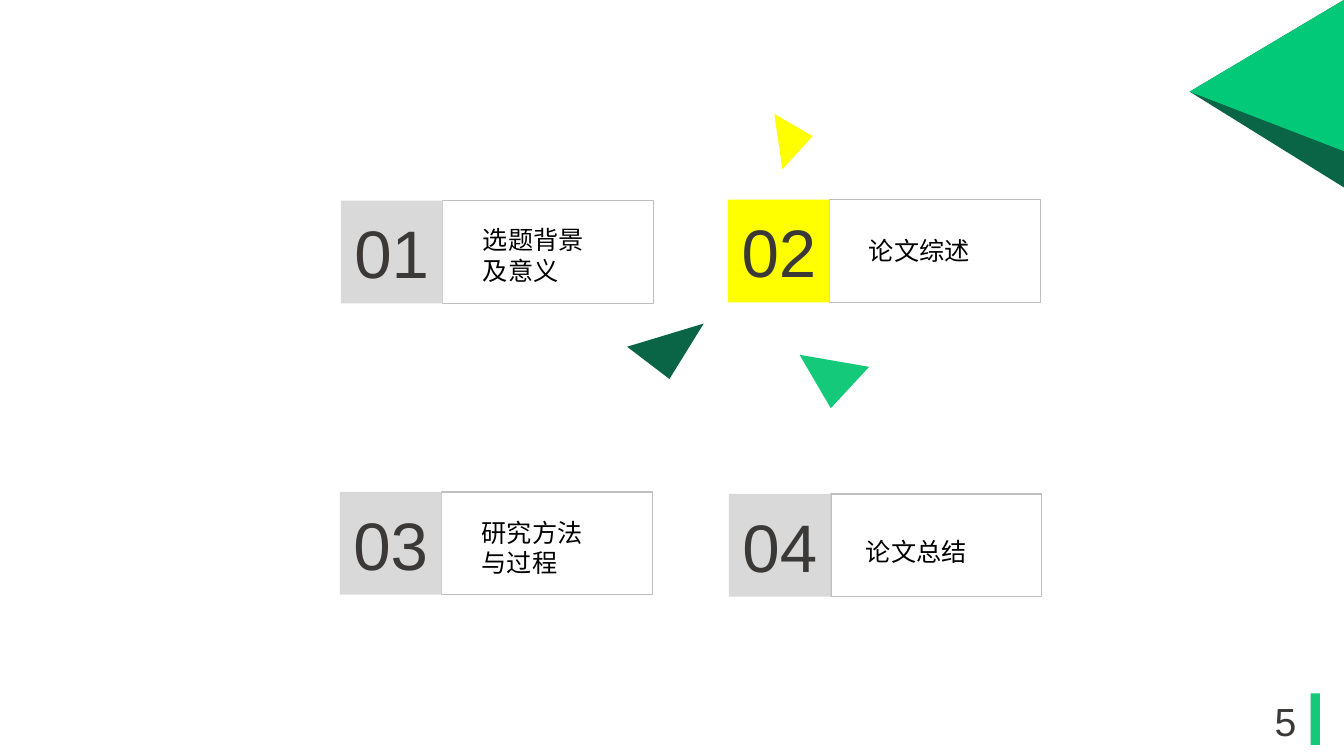
from pptx import Presentation
from pptx import util as u
from pptx.dml.color import RGBColor
from pptx.enum import shapes, text

GREEN = RGBColor(0x14, 0xC9, 0x7A)
BRIGHT_GREEN = RGBColor(0x02, 0xC9, 0x78)
DARK_GREEN = RGBColor(0x0A, 0x65, 0x46)
YELLOW = RGBColor(0xFF, 0xFF, 0x00)
LIGHT_GRAY = RGBColor(0xD9, 0xD9, 0xD9)
BORDER_GRAY = RGBColor(0xBF, 0xBF, 0xBF)
CHARCOAL = RGBColor(0x3B, 0x38, 0x38)
BLACK = RGBColor(0x00, 0x00, 0x00)

NUMBER_WIDTH, LABEL_WIDTH, CARD_HEIGHT = 1.01, 2.09, 1.02

# Card left and top, number, number fill, label lines, label offset in the card
AGENDA = [
    (3.38, 1.99, "01", LIGHT_GRAY, ["选题背景", "及意义"], (1.31, 0.19)),
    (7.22, 1.98, "02", YELLOW, ["论文综述"], (1.3, 0.31)),
    (3.37, 4.88, "03", LIGHT_GRAY, ["研究方法", "与过程"], (1.31, 0.2)),
    (7.23, 4.9, "04", LIGHT_GRAY, ["论文总结"], (1.26, 0.37)),
]

TRIANGLES = [
    (DARK_GREEN, [(6.22, 3.44), (6.64, 3.76), (6.98, 3.21)]),
    (YELLOW, [(7.68, 1.13), (7.76, 1.68), (8.06, 1.35)]),
    (GREEN, [(8.62, 3.64), (7.93, 3.52), (8.24, 4.05)]),
]

CORNER_GEM = [
    (DARK_GREEN, [(11.8, 0.91), (13.33, 0), (13.33, 1.86)]),
    (BRIGHT_GREEN, [(11.8, 0.91), (13.33, 0), (13.33, 1.5)]),
]


def inches(*lengths):
    return [u.Inches(length) for length in lengths]


def fill_plain(shape, color):
    shape.shadow.inherit = False
    shape.fill.solid()
    shape.fill.fore_color.rgb = color
    shape.line.fill.background()


def write_lines(shape, lines, size, color, align, anchor):
    frame = shape.text_frame
    frame.word_wrap = True
    frame.vertical_anchor = anchor
    frame.text = "\n".join(lines)
    font_format = {"name": "Arial", "size": u.Pt(size)}
    for paragraph in frame.paragraphs:
        paragraph.alignment = align
        font = paragraph.runs[0].font
        for attribute, value in font_format.items():
            setattr(font, attribute, value)
        font.color.rgb = color


def add_agenda_card(slide, left, top, number, color, lines, label_offset):
    card = slide.shapes.add_group_shape().shapes
    rectangle = shapes.MSO_SHAPE.RECTANGLE

    frame = card.add_shape(
        rectangle, *inches(left + NUMBER_WIDTH, top, LABEL_WIDTH, CARD_HEIGHT))
    frame.shadow.inherit = False
    frame.fill.background()
    frame.line.color.rgb = BORDER_GRAY
    frame.line.width = u.Pt(1)

    tile = card.add_shape(rectangle, *inches(left, top, NUMBER_WIDTH, CARD_HEIGHT))
    fill_plain(tile, color)
    write_lines(tile, [number], 48, CHARCOAL,
                text.PP_ALIGN.CENTER, text.MSO_ANCHOR.MIDDLE)

    label_height = 0.1 + 0.3 * len(lines)
    label = card.add_textbox(
        *inches(left + label_offset[0], top + label_offset[1], 1.51, label_height))
    write_lines(label, lines, 18, BLACK,
                text.PP_ALIGN.LEFT, text.MSO_ANCHOR.TOP)


def add_triangles(shape_tree, triangles):
    for color, points in triangles:
        start, *others = [inches(*point) for point in points]
        builder = shape_tree.build_freeform(*start)
        builder.add_line_segments(others, close=True)
        fill_plain(builder.convert_to_shape(), color)


def add_page_number(slide, left, top, number):
    box = slide.shapes.add_textbox(*inches(left, top + 0.07, 0.76, 0.4))
    write_lines(box, [number], 28, CHARCOAL,
                text.PP_ALIGN.CENTER, text.MSO_ANCHOR.MIDDLE)
    bar = slide.shapes.add_shape(
        shapes.MSO_SHAPE.RECTANGLE, *inches(left + 0.63, top, 0.09, 0.51))
    fill_plain(bar, GREEN)


def main():
    presentation = Presentation()
    presentation.slide_width, presentation.slide_height = inches(13.33, 7.5)
    slide = presentation.slides.add_slide(presentation.slide_layouts[6])
    for item in AGENDA:
        add_agenda_card(slide, *item)
    add_triangles(slide.shapes, TRIANGLES)
    add_triangles(slide.shapes.add_group_shape().shapes, CORNER_GEM)
    add_page_number(slide, 12.37, 6.88, "5")
    presentation.save("out.pptx")


if __name__ == "__main__":
    main()
